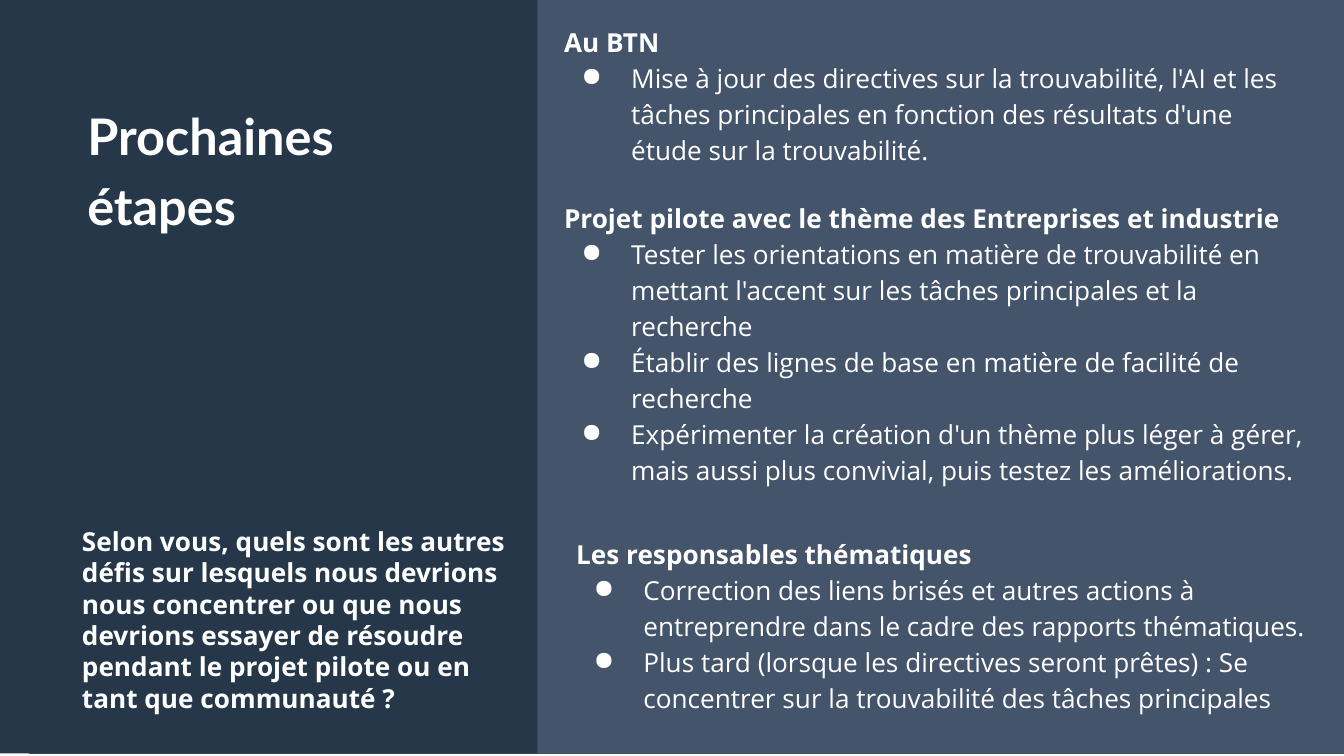
import pptx
import pptx.dml.color
import pptx.enum.shapes
import pptx.enum.text
import pptx.oxml
import pptx.oxml.ns
import pptx.util

Cm, Pt = pptx.util.Cm, pptx.util.Pt
WHITE, NAVY, SLATE = "FFFFFF", "26374A", "44546A"

# Box: left, top, width, height in cm
PANELS = [
    ((0.56, -0.08, 25.17, 14.33), SLATE, True),
    ((-0.13, -0.03, 10.29, 14.27), NAVY, False),
]
TITLE = ((1.4, 1.57, 7.85, 1.68), "Prochaines étapes")
ASK = (
    (1.3, 9.8, 8.99, 3.84),
    "Selon vous, quels sont les autres défis sur lesquels nous devrions nous "
    "concentrer ou que nous devrions essayer de résoudre pendant le projet "
    "pilote ou en tant que communauté ?",
)
STEPS = [
    ((10.64, 9.96, 14.76, 3.71), "Les responsables thématiques", [
        "Correction des liens brisés et autres actions à entreprendre dans le "
        "cadre des rapports thématiques.",
        "Plus tard (lorsque les directives seront prêtes) : Se concentrer sur "
        "la trouvabilité des tâches principales",
    ]),
    ((10.41, 0.28, 14.58, 3), "Au BTN", [
        "Mise à jour des directives sur la trouvabilité, l'AI et les tâches "
        "principales en fonction des résultats d'une étude sur la trouvabilité.",
    ]),
    ((10.41, 3.61, 14.58, 5.77),
     "Projet pilote avec le thème des Entreprises et industrie", [
        "Tester les orientations en matière de trouvabilité en mettant "
        "l'accent sur les tâches principales et la recherche",
        "Établir des lignes de base en matière de facilité de recherche",
        "Expérimenter la création d'un thème plus léger à gérer, mais aussi "
        "plus convivial, puis testez les améliorations.",
    ]),
]

HEAD = {"name": "Lato", "size": Pt(27), "bold": True}
BOLD = {"name": "Open Sans", "size": Pt(14), "bold": True}
BODY = {**BOLD, "bold": False}


def rgb(code):
    return pptx.dml.color.RGBColor.from_string(code)


def panel(slide, box, fill, edge):
    kind = pptx.enum.shapes.MSO_SHAPE.RECTANGLE
    shape = slide.shapes.add_shape(kind, *map(Cm, box))
    shape.shadow.inherit = False
    shape.fill.solid()
    shape.fill.fore_color.rgb = rgb(fill)
    if edge:
        shape.line.color.rgb = rgb(fill)
        shape.line.width = Pt(0.75)
    else:
        shape.line.fill.background()


def bullet(para):
    """Hang the paragraph behind a white dot."""
    props = para._p.get_or_add_pPr()
    props.set("marL", str(Cm(1.27)))
    props.set("indent", str(Cm(-0.94)))
    space = pptx.oxml.ns.nsdecls("a")
    for xml in (
        f'<a:buClr {space}><a:srgbClr val="{WHITE}"/></a:buClr>',
        f'<a:buChar {space} char="●"/>',
    ):
        props.append(pptx.oxml.parse_xml(xml))


def write(slide, box, lines, pad=0.13, gap=1.15):
    """Add a text box; each line is (text, format, dotted)."""
    frame = slide.shapes.add_textbox(*map(Cm, box)).text_frame
    form = {
        "word_wrap": True,
        "auto_size": pptx.enum.text.MSO_AUTO_SIZE.SHAPE_TO_FIT_TEXT,
        "margin_left": Cm(0.25), "margin_right": Cm(0.25),
        "margin_top": Cm(pad), "margin_bottom": Cm(pad),
    }
    for key, value in form.items():
        setattr(frame, key, value)
    for i, (text, style, dotted) in enumerate(lines):
        para = frame.add_paragraph() if i else frame.paragraphs[0]
        para.line_spacing = gap
        if dotted:
            bullet(para)
        run = para.add_run()
        run.text = text
        for key, value in style.items():
            setattr(run.font, key, value)
        run.font.color.rgb = rgb(WHITE)


def main():
    deck = pptx.Presentation()
    deck.slide_width, deck.slide_height = Cm(25.4), Cm(14.29)
    slide = deck.slides.add_slide(deck.slide_layouts[6])
    for part in PANELS:
        panel(slide, *part)
    box, text = TITLE
    write(slide, box, [(text, HEAD, False)], pad=0.25)
    for box, head, items in STEPS:
        lines = [(head, BOLD, False)] + [(item, BODY, True) for item in items]
        write(slide, box, lines)
    box, text = ASK
    write(slide, box, [(text, BOLD, False)], gap=1.0)
    deck.save("out.pptx")


if __name__ == "__main__":
    main()
